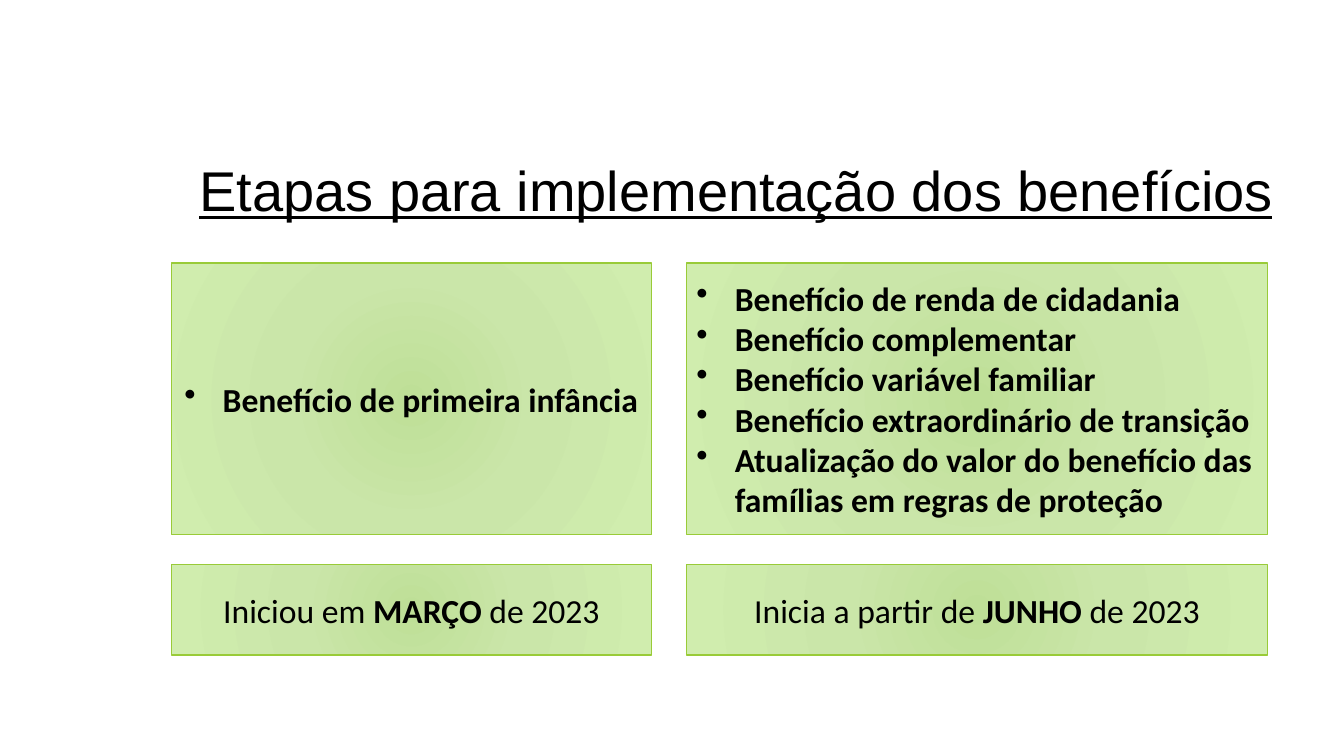
"""Builds the slide on the stages of the benefit roll-out."""
from lxml import etree
from pptx import Presentation
from pptx.dml.color import RGBColor
from pptx.enum.shapes import MSO_SHAPE
from pptx.enum.text import MSO_ANCHOR, PP_ALIGN
from pptx.oxml import parse_xml
from pptx.oxml.ns import nsdecls, qn
from pptx.util import Inches, Pt

RECT = MSO_SHAPE.RECTANGLE
MIDDLE = MSO_ANCHOR.MIDDLE
LEFT, CENTER = PP_ALIGN.LEFT, PP_ALIGN.CENTER
HUES = {"text": "000000", "line": "99CB38", "core": "BEDF97", "mid": "CAE6A9", "rim": "D0EDAE"}
STOPS = [(0, "core"), (45, "mid"), (100, "rim")]
COLS = [(1.7, 4.76), (6.81, 5.76)]
ROWS = [(2.61, 2.69), (5.6, 0.9)]
STAGES = [
    (CENTER, ["Benefício de primeira infância"],
     ["Iniciou em ", "MARÇO", " de 2023"]),
    (LEFT, ["Benefício de renda de cidadania",
            "Benefício complementar",
            "Benefício variável familiar",
            "Benefício extraordinário de transição",
            "Atualização do valor do benefício das famílias em regras de proteção"],
     ["Inicia a partir de ", "JUNHO", " de 2023"]),
]


def style(para, face, size, bullet=None, indent=0):
    props = para._p.get_or_add_pPr()
    if bullet:
        props.set("marL", str(Inches(indent)))
        props.set("indent", str(-Inches(indent)))
        etree.SubElement(props, qn("a:buChar")).set("char", bullet)
    para.font.name = face
    para.font.size = Pt(size)
    para.font.color.rgb = RGBColor.from_string(HUES["text"])


def panel(col, row):
    (left, width), (top, height) = col, row
    box = slide.shapes.add_shape(RECT, Inches(left), Inches(top), Inches(width), Inches(height))
    box.shadow.inherit = False
    stops = "".join(f'<a:gs pos="{pos * 1000}"><a:srgbClr val="{HUES[hue]}"/></a:gs>'
                    for pos, hue in STOPS)
    grad = parse_xml(
        f'<a:gradFill {nsdecls("a")} rotWithShape="1"><a:gsLst>{stops}</a:gsLst>'
        '<a:path path="circle"><a:fillToRect l="100000" t="100000" r="100000" b="100000"/>'
        '</a:path></a:gradFill>')
    box._element.spPr.find(qn("a:prstGeom")).addnext(grad)
    box.line.color.rgb = RGBColor.from_string(HUES["line"])
    box.line.width = Pt(1)
    box.text_frame.word_wrap = True
    box.text_frame.vertical_anchor = MIDDLE
    return box.text_frame


deck = Presentation()
deck.slide_width, deck.slide_height = Inches(13.33), Inches(7.5)
slide = deck.slides.add_slide(deck.slide_layouts[6])

title = slide.shapes.add_textbox(Inches(1.7), Inches(1.57), Inches(11), Inches(0.75)).text_frame
title.word_wrap = True
title.margin_left = title.margin_right = 0
title.text = "Etapas para implementação dos benefícios"
head = title.paragraphs[0]
head.line_spacing = 0.9
style(head, "Arial", 40, " ", 0.1)
head.font.underline = True

for col, (align, items, start) in zip(COLS, STAGES):
    frame = panel(col, ROWS[0])
    frame.text = "\n".join(items)
    for para in frame.paragraphs:
        para.alignment = align
        style(para, "Calibri", 24, "•", 0.38)
        para.font.bold = True

    para = panel(col, ROWS[1]).paragraphs[0]
    para.alignment = CENTER
    style(para, "Calibri", 24)
    for part in start:
        run = para.add_run()
        run.text = part
        run.font.bold = part.isupper()

deck.save("out.pptx")
